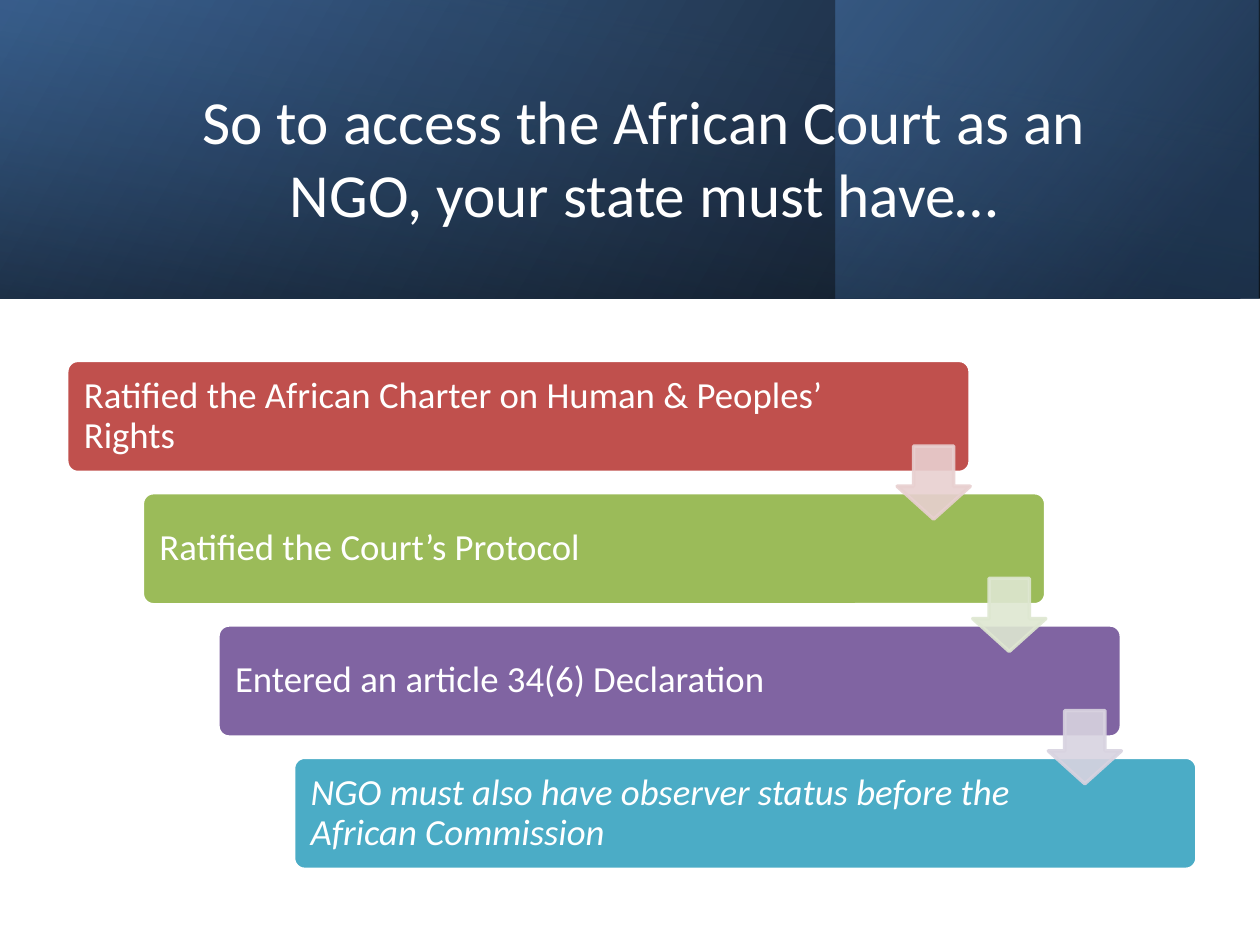
"""Build a slide with a descending staircase of conditions for NGO access to the African Court."""
import pptx
import pptx.dml.color
import pptx.enum.shapes
import pptx.enum.text
import pptx.oxml
import pptx.oxml.ns
import pptx.util
import lxml.etree

RGB = pptx.dml.color.RGBColor
SHAPE = pptx.enum.shapes.MSO_SHAPE
ALIGN = pptx.enum.text.PP_ALIGN
WHITE = RGB(0xFF, 0xFF, 0xFF)
BLACK = RGB(0x00, 0x00, 0x00)
NAVY = RGB(0x25, 0x40, 0x61)
STEEL = RGB(0x37, 0x60, 0x92)
BLUE = RGB(0x4F, 0x81, 0xBD)
RED, PINK = RGB(0xC0, 0x50, 0x4D), RGB(0xE8, 0xD0, 0xD0)
GREEN, MINT = RGB(0x9B, 0xBB, 0x59), RGB(0xDE, 0xE7, 0xD1)
PURPLE, LILAC = RGB(0x80, 0x64, 0xA2), RGB(0xD8, 0xD3, 0xE0)
TEAL = RGB(0x4B, 0xAC, 0xC6)

TITLE = "So to access the African Court as an NGO, your state must have…"
CONDITIONS = [
    ("Ratified the African Charter on Human & Peoples’ Rights", RED, PINK, False),
    ("Ratified the Court’s Protocol", GREEN, MINT, False),
    ("Entered an article 34(6) Declaration", PURPLE, LILAC, False),
    ("NGO must also have observer status before the African Commission", TEAL, None, True),
]
BANNER_HEIGHT = 2.37
BANNER_LAYERS = [
    (0, 10, 150, [(0, BLACK, 96), (1, STEEL, 96)]),
    (6.63, 3.36, 140, [(0.19, NAVY, 68), (1, BLUE, 48)]),
    (0, 10, 260, [(0.23, STEEL, 16), (0.99, BLACK, 45)]),
]
FIRST_LEFT, FIRST_TOP = 0.53, 2.86
STEP_X, STEP_Y = 0.6, 1.05
BAR_WIDTH, BAR_HEIGHT = 7.17, 0.89
ARROW_SIZE = 0.58


def set_opacity(properties, percents):
    colors = properties.iter(pptx.oxml.ns.qn("a:srgbClr"))
    for color, percent in zip(colors, percents):
        alpha = lxml.etree.SubElement(color, pptx.oxml.ns.qn("a:alpha"))
        alpha.set("val", str(percent * 1000))


def add_block(slide, kind, left, top, width, height, fill=None, line=None):
    block = slide.shapes.add_shape(kind, *map(pptx.util.Inches, (left, top, width, height)))
    block.shadow.inherit = False
    if fill is not None:
        block.fill.solid()
        block.fill.fore_color.rgb = fill
    if line is None:
        block.line.fill.background()
    else:
        block.line.color.rgb = line
        block.line.width = pptx.util.Pt(2)
    return block


def write(holder, text, size, align=ALIGN.LEFT, italic=False, spacing=1.0, margins=(0.1, 0.05, 0.1, 0.05)):
    frame = holder.text_frame
    frame.word_wrap = True
    frame.vertical_anchor = pptx.enum.text.MSO_ANCHOR.MIDDLE
    frame.margin_left, frame.margin_top, frame.margin_right, frame.margin_bottom = map(pptx.util.Inches, margins)
    paragraph = frame.paragraphs[0]
    paragraph.alignment = align
    paragraph.line_spacing = spacing
    run = paragraph.add_run()
    run.text = text
    run.font.name = "Calibri"
    run.font.size = pptx.util.Pt(size)
    run.font.italic = italic
    run.font.color.rgb = WHITE


def add_banner(slide):
    for left, width, angle, stops in BANNER_LAYERS:
        layer = add_block(slide, SHAPE.RECTANGLE, left, 0, width, BANNER_HEIGHT)
        layer.fill.gradient()
        layer.fill.gradient_angle = angle
        for stop, (position, color, _) in zip(layer.fill.gradient_stops, stops):
            stop.position = position
            stop.color.rgb = color
        set_opacity(layer.fill._xPr, [opacity for _, _, opacity in stops])
    title = slide.shapes.add_textbox(*map(pptx.util.Inches, (1.13, 0.38, 7.97, 1.72)))
    write(title, TITLE, 35, align=ALIGN.CENTER)


def add_staircase(slide):
    for row, (text, color, _, italic) in enumerate(CONDITIONS):
        bar = add_block(slide, SHAPE.ROUNDED_RECTANGLE, FIRST_LEFT + row * STEP_X,
                        FIRST_TOP + row * STEP_Y, BAR_WIDTH, BAR_HEIGHT, color, WHITE)
        bar.adjustments[0] = 0.1
        write(bar, text, 21, italic=italic, spacing=0.9, margins=(0.11, 0.09, 1.1, 0.09))
    arrow_left = FIRST_LEFT + BAR_WIDTH - ARROW_SIZE
    arrow_top = FIRST_TOP + (BAR_HEIGHT + STEP_Y - ARROW_SIZE) / 2
    for row, (_, _, tint, _) in enumerate(CONDITIONS[:-1]):
        arrow = add_block(slide, SHAPE.DOWN_ARROW, arrow_left + row * STEP_X,
                          arrow_top + row * STEP_Y, ARROW_SIZE, ARROW_SIZE, tint, tint)
        arrow.adjustments[0], arrow.adjustments[1] = 0.55, 0.45
        set_opacity(arrow.fill._xPr, [90, 90])


def main():
    deck = pptx.Presentation()
    deck.slide_width, deck.slide_height = pptx.util.Inches(10), pptx.util.Inches(7.5)
    slide = deck.slides.add_slide(deck.slide_layouts[6])
    add_banner(slide)
    add_staircase(slide)
    deck.save("out.pptx")


if __name__ == "__main__":
    main()
